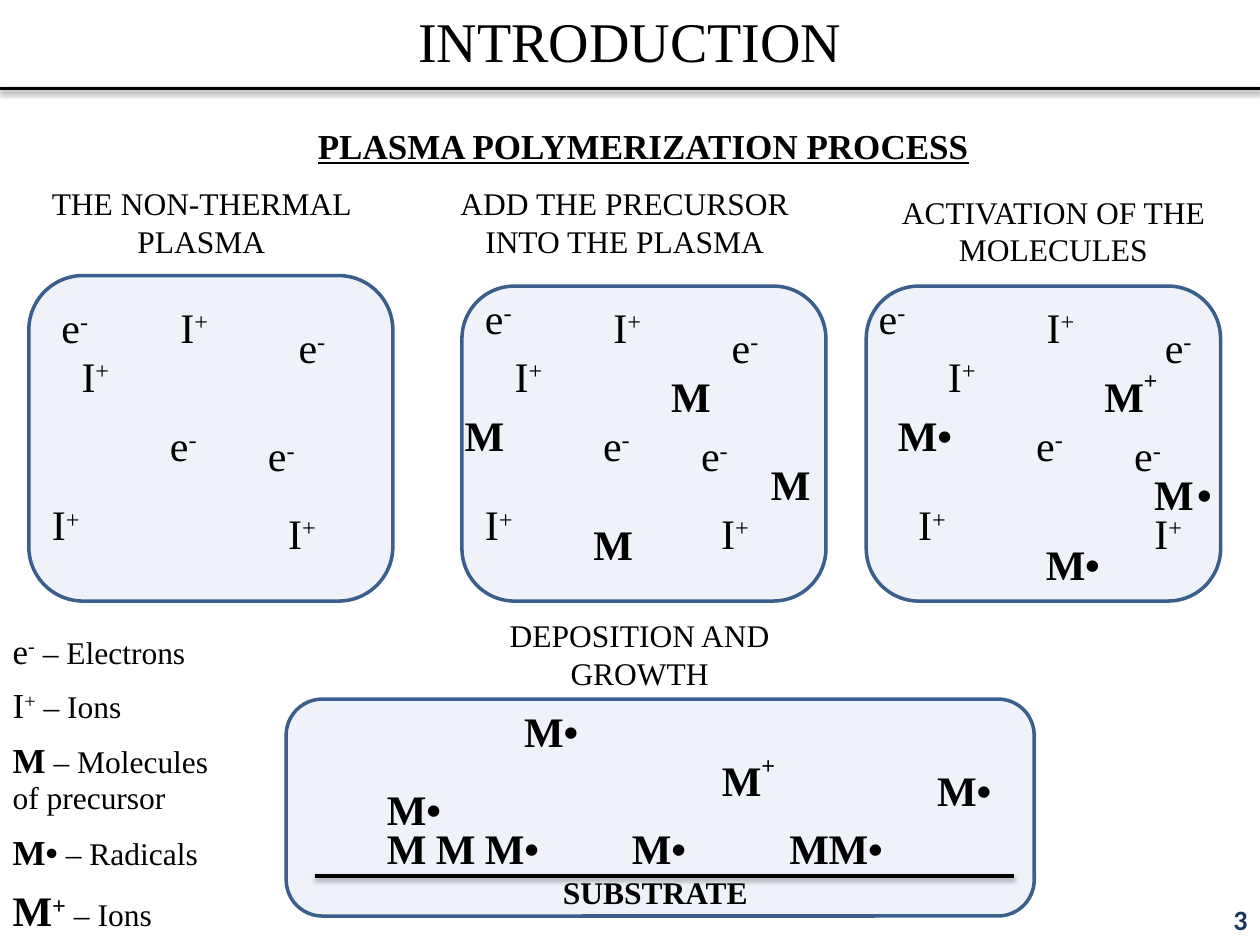
"""Build the plasma polymerization introduction slide."""
from lxml import etree
from pptx import Presentation
from pptx import util as u
from pptx.dml.color import RGBColor
from pptx.enum import shapes, text
from pptx.oxml import ns

BLACK = RGBColor(0x00, 0x00, 0x00)
NAVY = RGBColor(0x17, 0x37, 0x5E)
PANEL_FILL = RGBColor(0x4F, 0x81, 0xBD)
PANEL_LINE = RGBColor(0x3A, 0x5F, 0x8C)
SERIF = "Times New Roman"
SUPERSCRIPT = "30000"


class PlasmaSlide:
    def __init__(self, slide):
        self.slide = slide

    def style(self, paragraph, size, bold=False, color=BLACK, font=SERIF):
        paragraph.font.size = u.Pt(size)
        paragraph.font.bold = bold
        paragraph.font.name = font
        paragraph.font.color.rgb = color

    def raised(self, paragraph, sign):
        run = paragraph.add_run()
        run.text = sign
        run._r.get_or_add_rPr().set("baseline", SUPERSCRIPT)
        return run

    def label(self, words, x, y, width, height, size, bold=False, color=BLACK,
              font=SERIF, align=text.PP_ALIGN.LEFT, wrap=True, sign=""):
        box = self.slide.shapes.add_textbox(u.Pt(x), u.Pt(y), u.Pt(width), u.Pt(height))
        frame = box.text_frame
        frame.word_wrap = wrap
        frame.auto_size = text.MSO_AUTO_SIZE.SHAPE_TO_FIT_TEXT
        paragraph = frame.paragraphs[0]
        paragraph.alignment = align
        self.style(paragraph, size, bold, color, font)
        if words:
            paragraph.add_run().text = words
        if sign:
            self.raised(paragraph, sign)
        return box

    def heading(self, words, x, y, width, height=51, size=18):
        self.label(words, x, y, width, height, size, align=text.PP_ALIGN.CENTER)

    def panel(self, x, y, width, height):
        panel = self.slide.shapes.add_shape(
            shapes.MSO_SHAPE.ROUNDED_RECTANGLE, u.Pt(x), u.Pt(y), u.Pt(width), u.Pt(height))
        panel.shadow.inherit = False
        panel.fill.solid()
        panel.fill.fore_color.rgb = PANEL_FILL
        tint = panel.fill._xPr.find(".//" + ns.qn("a:srgbClr"))
        etree.SubElement(tint, ns.qn("a:alpha"), val="9000")
        panel.line.color.rgb = PANEL_LINE
        panel.line.width = u.Pt(2)

    def rule(self, left, right, y):
        line = self.slide.shapes.add_connector(
            shapes.MSO_CONNECTOR.STRAIGHT, u.Pt(left), u.Pt(y), u.Pt(right), u.Pt(y))
        line.line.color.rgb = BLACK
        line.line.width = u.Pt(2)
        effects = etree.SubElement(line._element.spPr, ns.qn("a:effectLst"))
        shadow = etree.SubElement(
            effects, ns.qn("a:outerShdw"), blurRad=str(u.Pt(3.1)), dist=str(u.Pt(1.6)),
            dir="5400000", rotWithShape="0")
        shade = etree.SubElement(shadow, ns.qn("a:srgbClr"), val=str(BLACK))
        etree.SubElement(shade, ns.qn("a:alpha"), val="38000")

    def charged(self, symbol, sign, x, y, width):
        self.label(symbol, x, y, width, 36, 24, sign=sign)

    def molecule(self, x, y):
        self.label("M", x, y, 24.5, 36, 24, bold=True)

    def radical(self, x, y, gap=22.5):
        self.molecule(x, y)
        self.label("•", x + gap, y, 15, 36, 24, bold=True)

    def molecular_ion(self, x, y):
        self.molecule(x, y)
        self.label("", x + 22.5, y - 5.5, 14.5, 36, 24, bold=True, sign="+")

    def legend(self, entries, x, y, width, height):
        frame = self.slide.shapes.add_table(
            len(entries), 1, u.Pt(x), u.Pt(y), u.Pt(width), u.Pt(height))
        table = frame.table
        table.first_row = table.horz_banding = False
        for row, (symbol, sign, meaning, size, bold, row_height) in zip(table.rows, entries):
            row.height = u.Pt(row_height)
            cell = row.cells[0]
            cell.fill.background()
            paragraph = cell.text_frame.paragraphs[0]
            self.style(paragraph, 18)
            term = paragraph.add_run()
            term.text = symbol
            terms = [term] + ([self.raised(paragraph, sign)] if sign else [])
            for run in terms:
                run.font.size = u.Pt(size)
                run.font.bold = bold
            paragraph.add_run().text = f" – {meaning}"
        frame.height = u.Pt(height)


def main():
    deck = Presentation()
    deck.slide_width, deck.slide_height = u.Pt(720), u.Pt(540)
    page = PlasmaSlide(deck.slides.add_slide(deck.slide_layouts[6]))

    page.heading("INTRODUCTION", 0, 0, 720, 46, size=32)
    page.rule(0, 720, 50.5)
    number = page.label("3", 552, 511, 168, 29, 16, bold=True, color=NAVY,
                        font="Calibri", align=text.PP_ALIGN.RIGHT)
    number.text_frame.auto_size = text.MSO_AUTO_SIZE.NONE
    number.text_frame.vertical_anchor = text.MSO_ANCHOR.MIDDLE
    process = page.label("PLASMA POLYMERIZATION PROCESS", 174.5, 67.5, 389.5, 31.5, 20,
                         bold=True, wrap=False)
    process.text_frame.paragraphs[0].font.underline = True

    stages = [
        ("THE NON-THERMAL PLASMA", (0, 101.5, 230), (16.5, 157.5, 208, 186), (28, 168.5)),
        ("ADD THE PRECURSOR INTO THE PLASMA", (242, 101.5, 230), (264, 163.5, 208, 180),
         (270, 163.5)),
        ("ACTIVATION OF THE MOLECULES", (484, 106.5, 236), (495, 163.5, 202.5, 180),
         (495, 163.5)),
    ]
    plasma = [
        ("e", "-", 90, 236, 40), ("e", "-", 163.5, 180, 32), ("e", "-", 146, 242, 40),
        ("I", "+", 157.5, 286.5, 40), ("I", "+", 96, 168.5, 36),
        ("I", "+", 22.5, 281.5, 32), ("I", "+", 39.5, 196.5, 32),
    ]
    stage_step = 247.5
    for index, (title, title_place, chamber, first_electron) in enumerate(stages):
        page.heading(title, *title_place)
        page.panel(*chamber)
        page.charged("e", "-", *first_electron, 40)
        for symbol, sign, x, y, width in plasma:
            page.charged(symbol, sign, x + index * stage_step, y, width)

    page.heading("DEPOSITION AND GROWTH", 258.5, 348.5, 214)
    page.panel(163.5, 399.5, 427.5, 124)
    page.rule(180, 579.5, 500.5)

    surface = 466.5
    for place in [(258.5, 230.5), (332, 292.5), (376.5, 208), (433.5, 258.5),
                  (214, surface), (242, surface), (444, surface)]:
        page.molecule(*place)
    for place in [(506, 230.5), (590.5, 304), (652.5, 264, 24.5),
                  (270, surface), (354, surface), (466.5, surface),
                  (214, 444), (292.5, 399.5), (528.5, 433.5)]:
        page.radical(*place)
    for place in [(624, 208), (405.5, 427.5)]:
        page.molecular_ion(*place)
    page.label("SUBSTRATE", 314.5, 495.5, 121, 29, 18, bold=True, wrap=False)

    page.legend([
        ("e", "-", "Electrons", 20, False, 24),
        ("I", "+", "Ions", 20, False, 24),
        ("M", "", "Molecules of precursor", 20, True, 41),
        ("M•", "", "Radicals", 20, True, 24),
        ("M", "+", "Ions", 24, True, 28),
    ], 0, 358, 134.5, 182)
    deck.save("out.pptx")


if __name__ == "__main__":
    main()
